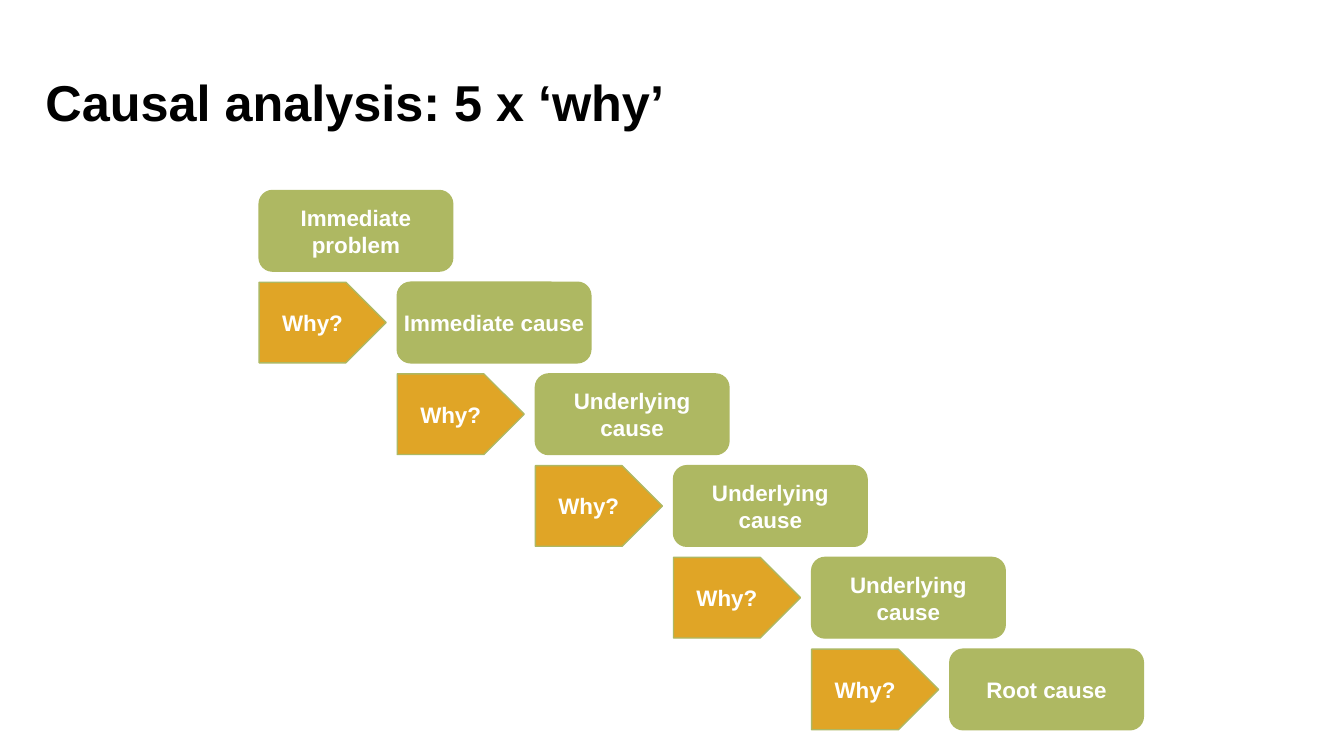
from dataclasses import dataclass

from pptx import Presentation
from pptx.dml.color import RGBColor
from pptx.enum.shapes import MSO_SHAPE
from pptx.enum.text import MSO_ANCHOR, PP_ALIGN
from pptx.util import Inches, Pt

ROUNDED = MSO_SHAPE.ROUNDED_RECTANGLE
PENTAGON = MSO_SHAPE.PENTAGON
TOP, MIDDLE = MSO_ANCHOR.TOP, MSO_ANCHOR.MIDDLE
LEFT, CENTER = PP_ALIGN.LEFT, PP_ALIGN.CENTER


@dataclass
class Theme:
    font: str = "Arial"
    title_size: int = 36
    label_size: int = 16
    black: RGBColor = RGBColor(0x00, 0x00, 0x00)
    white: RGBColor = RGBColor(0xFF, 0xFF, 0xFF)
    green: RGBColor = RGBColor(0xAE, 0xB8, 0x62)
    amber: RGBColor = RGBColor(0xE0, 0xA5, 0x26)


theme = Theme()


def write(shape, text, size, color, align, anchor, side=0, edge=0):
    frame = shape.text_frame
    frame.text = text
    frame.word_wrap = True
    frame.vertical_anchor = anchor
    frame.margin_left = frame.margin_right = Inches(side)
    frame.margin_top = frame.margin_bottom = Inches(edge)
    para = frame.paragraphs[0]
    para.alignment = align
    font = para.runs[0].font
    font.name, font.size, font.bold = theme.font, Pt(size), True
    font.color.rgb = color


def add_step(kind, column, row, width, fill, text, side):
    box = page.shapes.add_shape(
        kind,
        Inches(START_X + column * STEP_X), Inches(START_Y + row * STEP_Y),
        Inches(width), Inches(STEP_HEIGHT))
    box.shadow.inherit = False
    box.fill.solid()
    box.fill.fore_color.rgb = fill
    box.line.color.rgb = theme.green
    box.line.width = Pt(1)
    write(box, text, theme.label_size, theme.white, CENTER, MIDDLE, side, 0.08)


# Slide
deck = Presentation()
deck.slide_width, deck.slide_height = Inches(13.33), Inches(7.5)
page = deck.slides.add_slide(deck.slide_layouts[5])

# Title
title = page.shapes.title
title.left, title.top = Inches(0.45), Inches(0.74)
title.width, title.height = Inches(12.39), Inches(2.06)
write(title, "Causal analysis: 5 x ‘why’", theme.title_size, theme.black, LEFT, TOP)
title.text_frame.paragraphs[0].line_spacing = 0.97

# Staircase grid
START_X, START_Y = 2.57, 1.89
STEP_X, STEP_Y = 1.37, 0.91
STEP_HEIGHT = 0.8
CAUSE_WIDTH, WHY_WIDTH = 1.92, 1.26
causes = ["Immediate problem", "Immediate cause", "Underlying cause",
          "Underlying cause", "Underlying cause", "Root cause"]

# Each cause sits one step down and right, with a question to its left
for step, cause in enumerate(causes):
    add_step(ROUNDED, step, step, CAUSE_WIDTH, theme.green, cause, 0)
    if step > 0:
        add_step(PENTAGON, step - 1, step, WHY_WIDTH, theme.amber, "Why?", 0.08)

deck.save("out.pptx")
